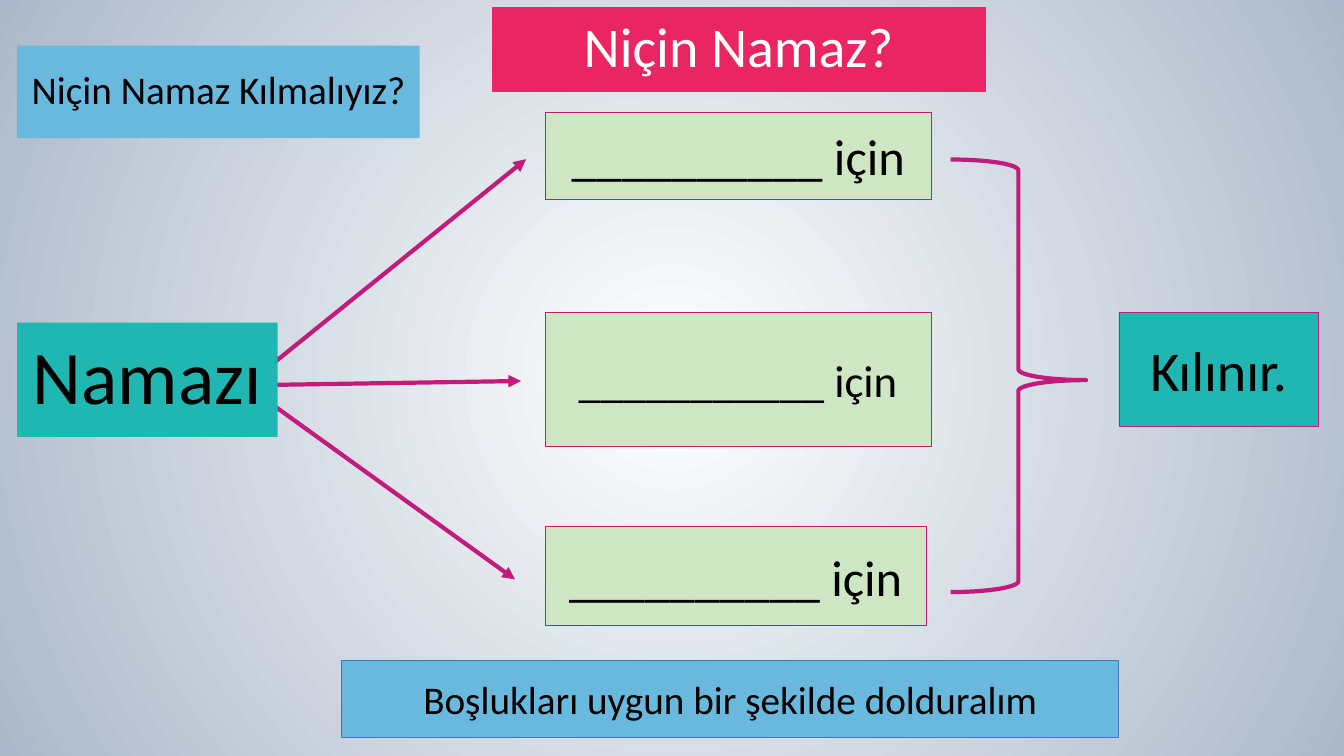
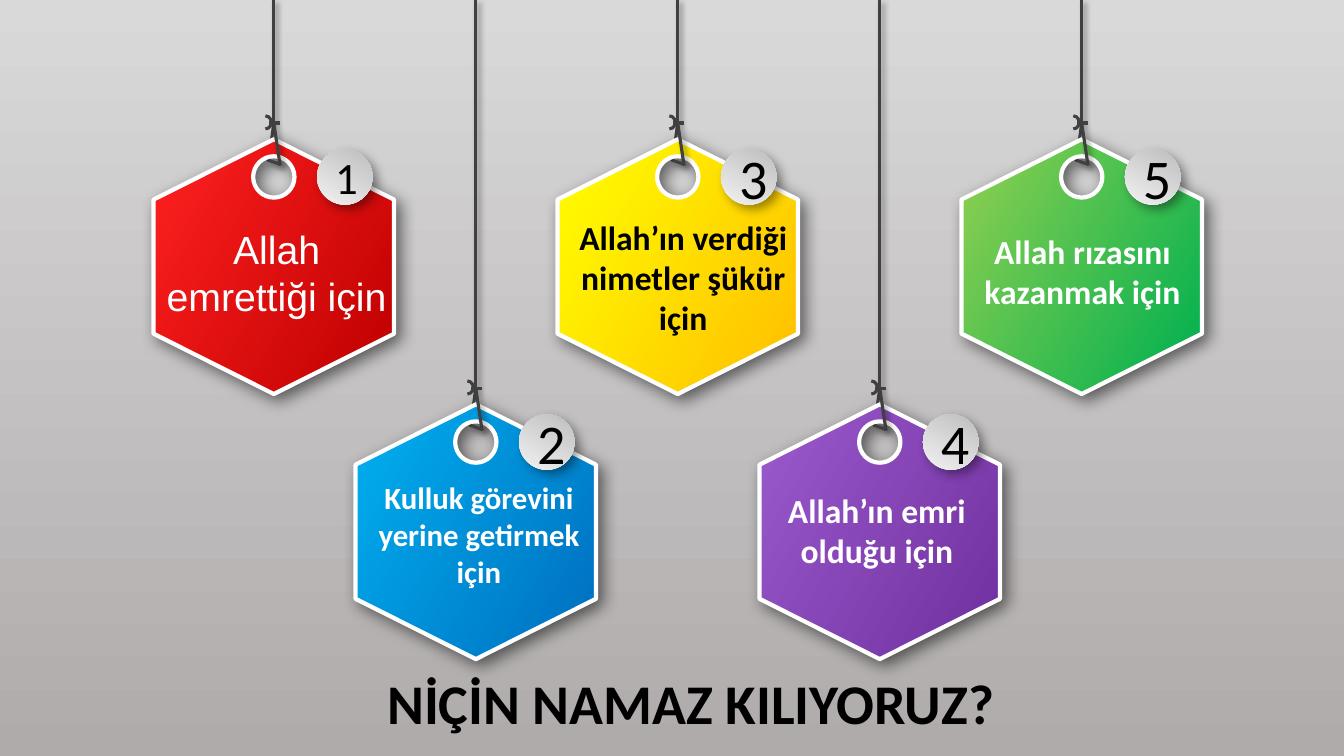
from dataclasses import dataclass

from lxml import etree
from pptx import Presentation
from pptx.dml.color import RGBColor
from pptx.enum.shapes import MSO_CONNECTOR, MSO_SHAPE
from pptx.enum.text import MSO_ANCHOR, PP_ALIGN
from pptx.oxml import parse_xml
from pptx.oxml.ns import nsdecls, qn
from pptx.util import Cm, Pt

RECT, OVAL = MSO_SHAPE.RECTANGLE, MSO_SHAPE.OVAL
ARC, BRACE = MSO_SHAPE.ARC, MSO_SHAPE.RIGHT_BRACE
STRAIGHT = MSO_CONNECTOR.STRAIGHT
MIDDLE, TOP = MSO_ANCHOR.MIDDLE, MSO_ANCHOR.TOP
CENTER = PP_ALIGN.CENTER


@dataclass(frozen=True)
class Theme:
    font: str = "Calibri"
    black: str = "000000"
    white: str = "FFFFFF"
    edge: str = "ADB9CA"
    magenta: str = "C11B7D"
    pink: str = "E92564"
    green: str = "CEE6C3"
    teal: str = "20B7B2"
    sky: str = "69B8DD"
    blue: str = "4472C4"
    cord: str = "404040"
    wall: tuple = ("D9D9D9", "AFABAB")
    badge: tuple = ("F2F2F2", "BFBFBF")
    red_tag: tuple = ("FF2121", "C00000")
    blue_tag: tuple = ("00B0F0", "0070C0")
    yellow_tag: tuple = ("FFFF00", "FFC000")
    purple_tag: tuple = ("9C5BCD", "7030A0")
    green_tag: tuple = ("92D050", "00B050")
    giant: int = 54
    title: int = 40
    large: int = 36
    medium: int = 32
    body: int = 28
    caption: int = 24
    small: int = 22
    thin: float = 0.5
    cord_width: float = 2.25
    thick: float = 3
    # opacity %, blur pt, distance pt
    tag_shadow: tuple = (55, 12, 5)
    badge_shadow: tuple = (40, 8, 5)
    cord_shadow: tuple = (40, 4, 3)


T = Theme()


def rgb(color):
    return RGBColor.from_string(color)


def set_gradient(fill, colors, angle=0, last=1.0):
    """Two-colour gradient; angle runs counter-clockwise from left-to-right."""
    fill.gradient()
    fill.gradient_angle = angle
    for stop, color, position in zip(fill.gradient_stops, colors, (0, last)):
        stop.color.rgb = rgb(color)
        stop.position = position


def set_shadow(shape, shadow=None):
    """Replace the inherited shadow by the given one, or by none."""
    props = shape._element.spPr
    for old in props.findall(qn("a:effectLst")):
        props.remove(old)
    effects = etree.SubElement(props, qn("a:effectLst"))
    if shadow:
        opacity, blur, distance = shadow
        effects.append(parse_xml(
            f'<a:outerShdw {nsdecls("a")} blurRad="{Pt(blur)}" dist="{Pt(distance)}" '
            f'dir="{45 * 60000}" algn="tl" rotWithShape="0"><a:srgbClr val="{T.black}">'
            f'<a:alpha val="{opacity * 1000}"/></a:srgbClr></a:outerShdw>'))


def add_round_hole(sp, x, y, radius):
    """Cut a circle, centred at x, y inside the shape, out of a freeform."""
    outline = sp._element.find(".//" + qn("a:path"))
    k = 0.55 * radius

    def command(name, *points):
        node = etree.SubElement(outline, qn(name))
        for dx, dy in points:
            etree.SubElement(node, qn("a:pt"), x=str(Cm(x + dx)), y=str(Cm(y + dy)))

    command("a:moveTo", (radius, 0))
    ux, uy = 1, 0
    for _ in range(4):
        vx, vy = -uy, ux
        command("a:cubicBezTo",
                (radius * ux + k * vx, radius * uy + k * vy),
                (radius * vx + k * ux, radius * vy + k * uy),
                (radius * vx, radius * vy))
        ux, uy = vx, vy
    command("a:close")


def write(shape, text, size=T.body, color=T.black, font=T.font, bold=False,
          anchor=MIDDLE, spacing=None):
    tf = shape.text_frame
    tf.word_wrap = True
    tf.vertical_anchor = anchor
    p = tf.paragraphs[0]
    p.alignment = CENTER
    if spacing:
        p.line_spacing = spacing
    r = p.add_run()
    r.text = text
    r.font.size, r.font.name, r.font.bold = Pt(size), font, bold
    r.font.color.rgb = rgb(color)


class Deck:
    def __init__(self):
        self.prs = Presentation()
        self.prs.slide_width, self.prs.slide_height = Cm(33.87), Cm(19.05)
        self.s = None

    def new_slide(self):
        self.s = self.prs.slides.add_slide(self.prs.slide_layouts[6])
        set_gradient(self.s.background.fill, (T.white, T.edge))
        linear = self.s.element.find(".//" + qn("a:lin"))
        linear.getparent().replace(linear, parse_xml(
            f'<a:path {nsdecls("a")} path="circle">'
            '<a:fillToRect l="50000" t="50000" r="50000" b="50000"/></a:path>'))

    def style(self, sp, fill, line, width, angle=60, last=0.97, shadow=None):
        if isinstance(fill, tuple):
            set_gradient(sp.fill, fill, angle, last)
        elif fill:
            sp.fill.solid()
            sp.fill.fore_color.rgb = rgb(fill)
        else:
            sp.fill.background()
        if line:
            sp.line.color.rgb = rgb(line)
            sp.line.width = Pt(width)
        else:
            sp.line.fill.background()
        set_shadow(sp, shadow)

    def shape(self, kind, box, fill=None, line=None, width=T.thin, adj=(), **look):
        sp = self.s.shapes.add_shape(kind, *map(Cm, box))
        for i, value in enumerate(adj):
            sp.adjustments[i] = value
        self.style(sp, fill, line, width, **look)
        return sp

    def panel(self, text, box, fill, line=None, **format):
        write(self.shape(RECT, box, fill, line), text, **format)

    def label(self, text, box, **format):
        write(self.s.shapes.add_textbox(*map(Cm, box)), text, anchor=TOP, **format)

    def line(self, start, end, color, width, arrow=False, shadow=None):
        c = self.s.shapes.add_connector(STRAIGHT, *map(Cm, start + end))
        c.line.color.rgb = rgb(color)
        c.line.width = Pt(width)
        if arrow:
            etree.SubElement(c.line._get_or_add_ln(), qn("a:tailEnd"), type="triangle")
        set_shadow(c, shadow)

    def hexagon(self, x, y, colors):
        """Hexagon with a round hole, drawn lying down and turned upright."""
        top, length, half, slope = 0.41, 6.42, 3.03, 1.52
        left, upper = x - length / 2, y + top + length / 2 - half
        points = [(0, half), (slope, 0), (length - slope, 0),
                  (length, half), (length - slope, 2 * half), (slope, 2 * half)]
        corners = [(Cm(left + dx), Cm(upper + dy)) for dx, dy in points]
        builder = self.s.shapes.build_freeform(*corners[0])
        builder.add_line_segments(corners[1:], close=True)
        sp = builder.convert_to_shape()
        add_round_hole(sp, 0.95, half, 0.52)
        sp.rotation = 90
        self.style(sp, colors, T.white, T.thick, shadow=T.tag_shadow)

    def tag(self, number, x, y, colors, size=T.title):
        """Numbered hexagon on a cord that is knotted at x, y."""
        def cord(start, end, shadow=T.cord_shadow):
            self.line((x + start[0], y + start[1]), (x + end[0], y + end[1]),
                      T.cord, T.cord_width, shadow=shadow)

        cord((0, 0), (-0.13, 0.97), None)
        self.hexagon(x, y, colors)
        cord((0, -y), (0, 0))
        cord((0, 0), (0.16, 1.07))
        cord((-0.13, 0.94), (0.16, 1.04))
        cord((0.16, 0), (-0.13, 0), None)
        self.shape(ARC, (x - 0.36, y - 0.18, 0.3, 0.33), line=T.cord,
                   width=T.cord_width, adj=(162, 53.99))
        badge = self.shape(OVAL, (x + 1.09, y + 0.66, 1.4, 1.4), T.badge,
                           shadow=T.badge_shadow)
        write(badge, str(number), size=size)


def fill_in_slide(deck):
    deck.new_slide()
    for start, end in (((6.15, 9.75), (13.26, 4.01)),
                       ((6.83, 9.7), (13.13, 9.6)),
                       ((6.22, 9.73), (12.98, 14.6))):
        deck.line(start, end, T.magenta, T.thick, arrow=True)
    for blanks, top, width, height, size in ((10, 2.82, 9.73, 2.21, T.large),
                                             (11, 7.87, 9.73, 3.39, T.medium),
                                             (10, 13.26, 9.6, 2.51, T.large)):
        deck.panel("_" * blanks + " için", (13.74, top, width, height),
                   T.green, T.magenta, size=size)
    deck.panel("Namazı", (0.43, 8.13, 6.57, 2.88), T.teal, size=T.giant, spacing=0.9)
    deck.shape(BRACE, (23.96, 4.02, 3.41, 10.9), line=T.magenta, width=T.thick,
               adj=(0.08, 0.51))
    deck.panel("Kılınır.", (28.2, 7.87, 5.03, 2.87), T.teal, T.magenta, size=T.title)
    deck.panel("Boşlukları uygun bir şekilde dolduralım",
               (8.61, 16.64, 19.58, 1.93), T.sky, T.blue)
    deck.panel("Niçin Namaz?", (12.4, 0.19, 12.43, 2.11), T.pink, T.pink,
               size=T.title, color=T.white, spacing=0.9)
    deck.panel("Niçin Namaz Kılmalıyız?", (0.43, 1.15, 10.15, 2.33), T.sky, spacing=0.9)


def reasons_slide(deck):
    deck.new_slide()
    deck.shape(RECT, (0, 0, 33.87, 19.05), T.wall, angle=270, last=1.0)
    bold = dict(size=T.caption, color=T.white, bold=True)
    reasons = (
        ("Allah emrettiği için", T.red_tag, (3.78, 5.56, 6.38, 2.64),
         dict(size=T.body, color=T.white, font="Arial")),
        ("Kulluk görevini yerine getirmek için", T.blue_tag,
         (8.97, 11.94, 6.2, 3.07), bold | dict(size=T.small)),
        ("Allah’ın verdiği nimetler şükür için", T.yellow_tag,
         (13.93, 5.33, 6.58, 3.33), bold | dict(color=T.black)),
        ("Allah’ın emri olduğu için", T.purple_tag, (18.44, 12.22, 7.32, 2.31), bold),
        ("Allah rızasını kazanmak için", T.green_tag, (24.03, 5.69, 6.5, 2.31), bold),
    )
    first_x, step, knots = 6.9, 5.09, (3.1, 9.78)
    for row, knot_y in enumerate(knots):
        for i in range(row, len(reasons), len(knots)):
            deck.tag(i + 1, first_x + i * step, knot_y, reasons[i][1],
                     size=T.title if i else T.medium)
    for text, _, box, format in reasons:
        deck.label(text, box, **format)
    deck.label("NİÇİN NAMAZ KILIYORUZ?", (8.69, 16.71, 17.45, 1.96),
               size=T.title, bold=True)


def main():
    deck = Deck()
    fill_in_slide(deck)
    reasons_slide(deck)
    deck.prs.save("out.pptx")


if __name__ == "__main__":
    main()
